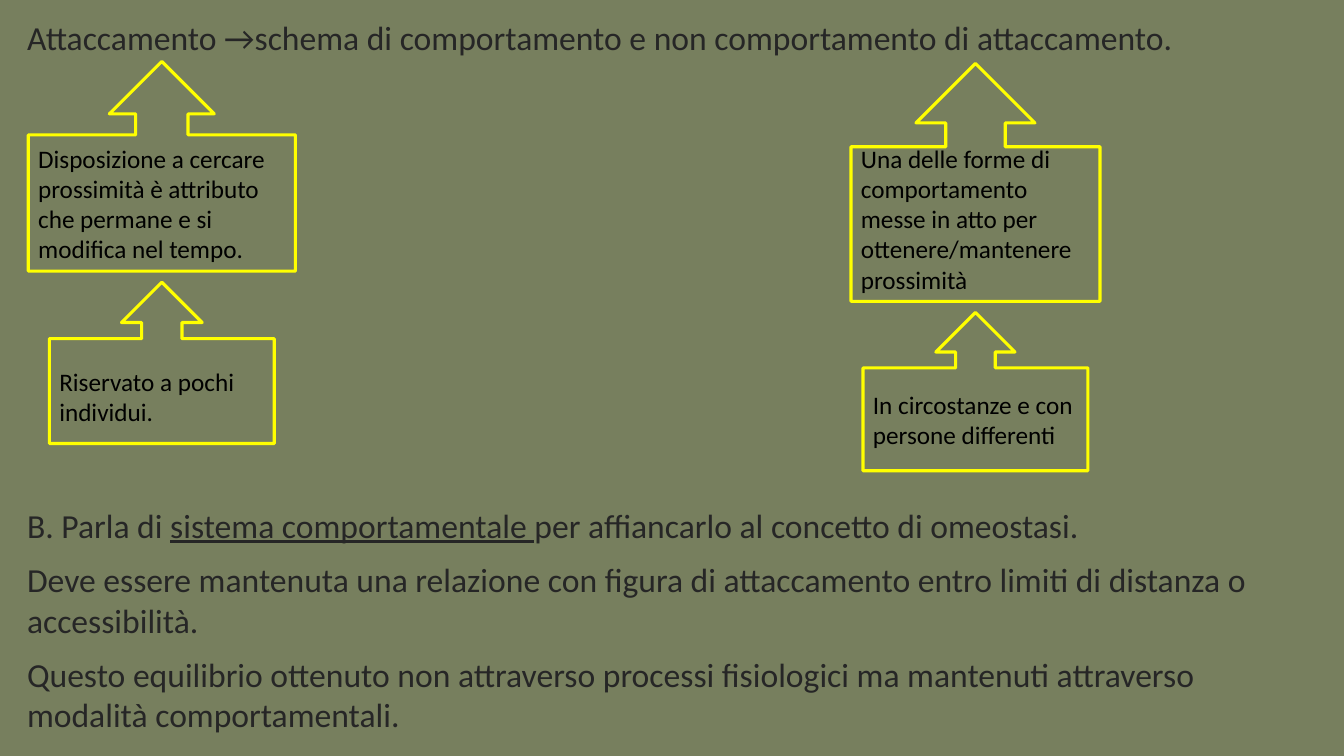
from pptx import Presentation
from pptx.dml.color import RGBColor
from pptx.enum.shapes import MSO_SHAPE
from pptx.enum.text import MSO_ANCHOR, MSO_AUTO_SIZE, PP_ALIGN
from pptx.util import Inches, Pt


def color(value):
    return RGBColor.from_string(value)


class Deck:
    font = "Calibri"
    background = "777F5E"
    body = "262626"
    label = "000000"
    accent = "FFFF00"

    def __init__(self, prs):
        self.s = prs.slides.add_slide(prs.slide_layouts[5])
        fill = self.s.background.fill
        fill.solid()
        fill.fore_color.rgb = color(self.background)

    def fill_text(self, tf, paragraphs, size, text_color, gap=0):
        tf.word_wrap = True
        tf.auto_size = MSO_AUTO_SIZE.NONE
        tf.vertical_anchor = MSO_ANCHOR.TOP
        for i, runs in enumerate(paragraphs):
            p = tf.add_paragraph() if i else tf.paragraphs[0]
            p.alignment = PP_ALIGN.LEFT
            p.line_spacing = 1.0
            p.space_before = Pt(gap if i else 0)
            for text, underline in runs:
                r = p.add_run()
                r.text = text
                r.font.name = self.font
                r.font.size = Pt(size)
                r.font.underline = underline
                r.font.color.rgb = color(text_color)

    def title(self, text, x, y, w, h):
        sp = self.s.shapes.title
        sp.left, sp.top, sp.width, sp.height = map(Inches, (x, y, w, h))
        self.fill_text(sp.text_frame, [[(text, False)]], 24, self.body)

    def text(self, paragraphs, x, y, w, h, size, text_color, gap=0):
        sp = self.s.shapes.add_textbox(*map(Inches, (x, y, w, h)))
        self.fill_text(sp.text_frame, paragraphs, size, text_color, gap)

    def callout(self, text, x, y, w, h, text_y, text_h):
        sp = self.s.shapes.add_shape(
            MSO_SHAPE.UP_ARROW_CALLOUT, *map(Inches, (x, y, w, h)))
        sp.shadow.inherit = False
        sp.fill.background()
        sp.line.color.rgb = color(self.accent)
        sp.line.width = Pt(2.25)
        self.text([[(text, False)]], x, text_y, w, text_h, 18, self.label)


CALLOUTS = [
    ("Disposizione a cercare prossimità è attributo che permane e si modifica nel tempo.",
     0.28, 0.61, 2.65, 2.08, 1.37, 1.31),
    ("Una delle forme di comportamento messe in atto per ottenere/mantenere prossimità",
     8.44, 0.63, 2.47, 2.36, 1.37, 1.62),
    ("Riservato a pochi individui.", 0.49, 2.8, 2.23, 1.6, 3.58, 0.71),
    ("In circostanze e con persone differenti", 8.56, 3.1, 2.23, 1.57, 3.81, 0.71),
]

BODY = [
    [("B. Parla di ", False),
     ("sistema comportamentale ", True),
     ("per affiancarlo al concetto di omeostasi.", False)],
    [("Deve essere mantenuta una relazione con figura di attaccamento "
      "entro limiti di distanza o accessibilità.", False)],
    [("Questo equilibrio ottenuto non attraverso processi fisiologici "
      "ma mantenuti attraverso modalità comportamentali.", False)],
]


def main():
    prs = Presentation()
    prs.slide_width, prs.slide_height = Inches(13.33), Inches(7.5)
    deck = Deck(prs)
    deck.title("Attaccamento →schema di comportamento e non comportamento di attaccamento.",
               0.17, 0.12, 12.94, 0.5)
    for callout in CALLOUTS:
        deck.callout(*callout)
    deck.text(BODY, 0.17, 4.96, 12.94, 2.54, 24, deck.body, gap=10)
    prs.save("out.pptx")


if __name__ == "__main__":
    main()
